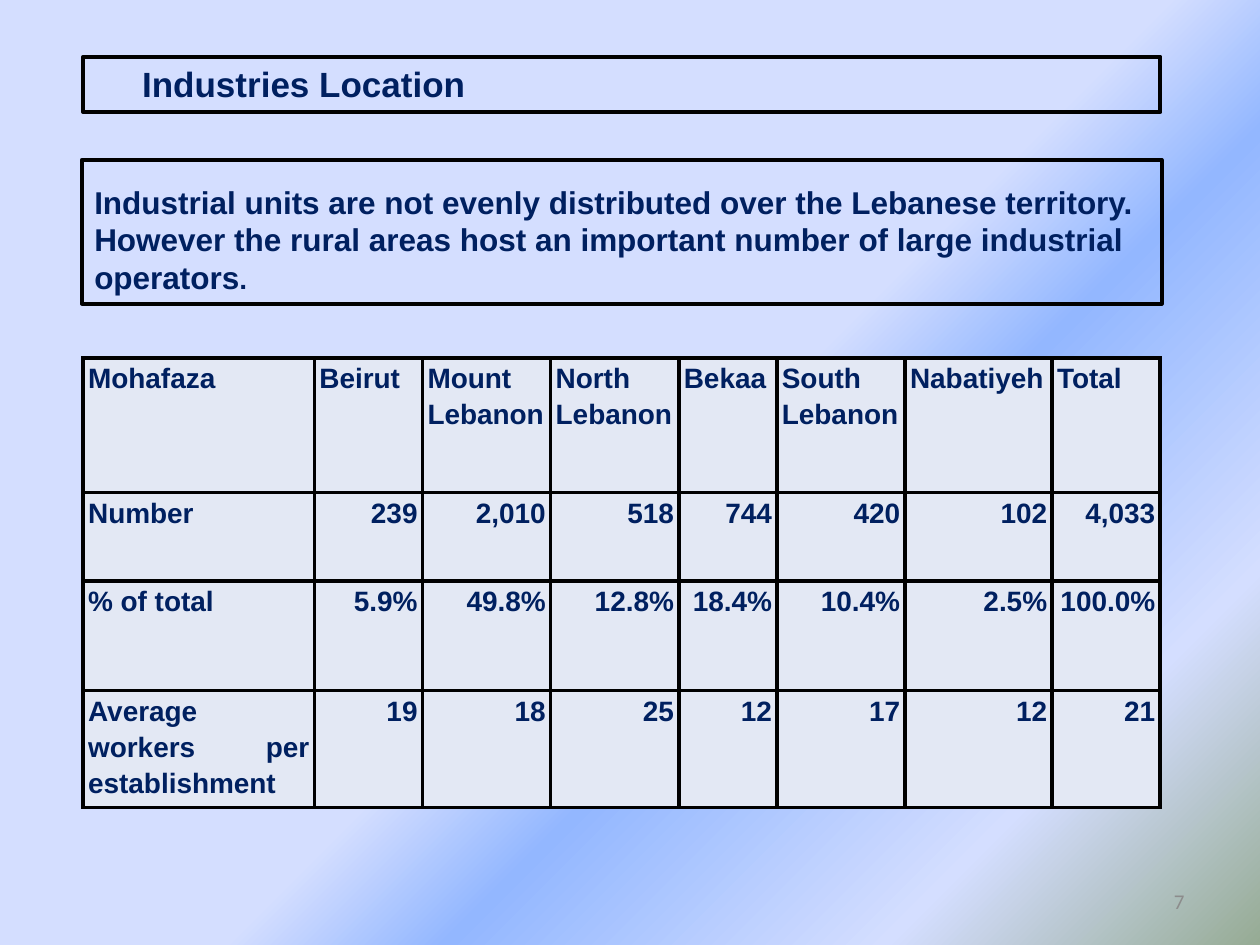
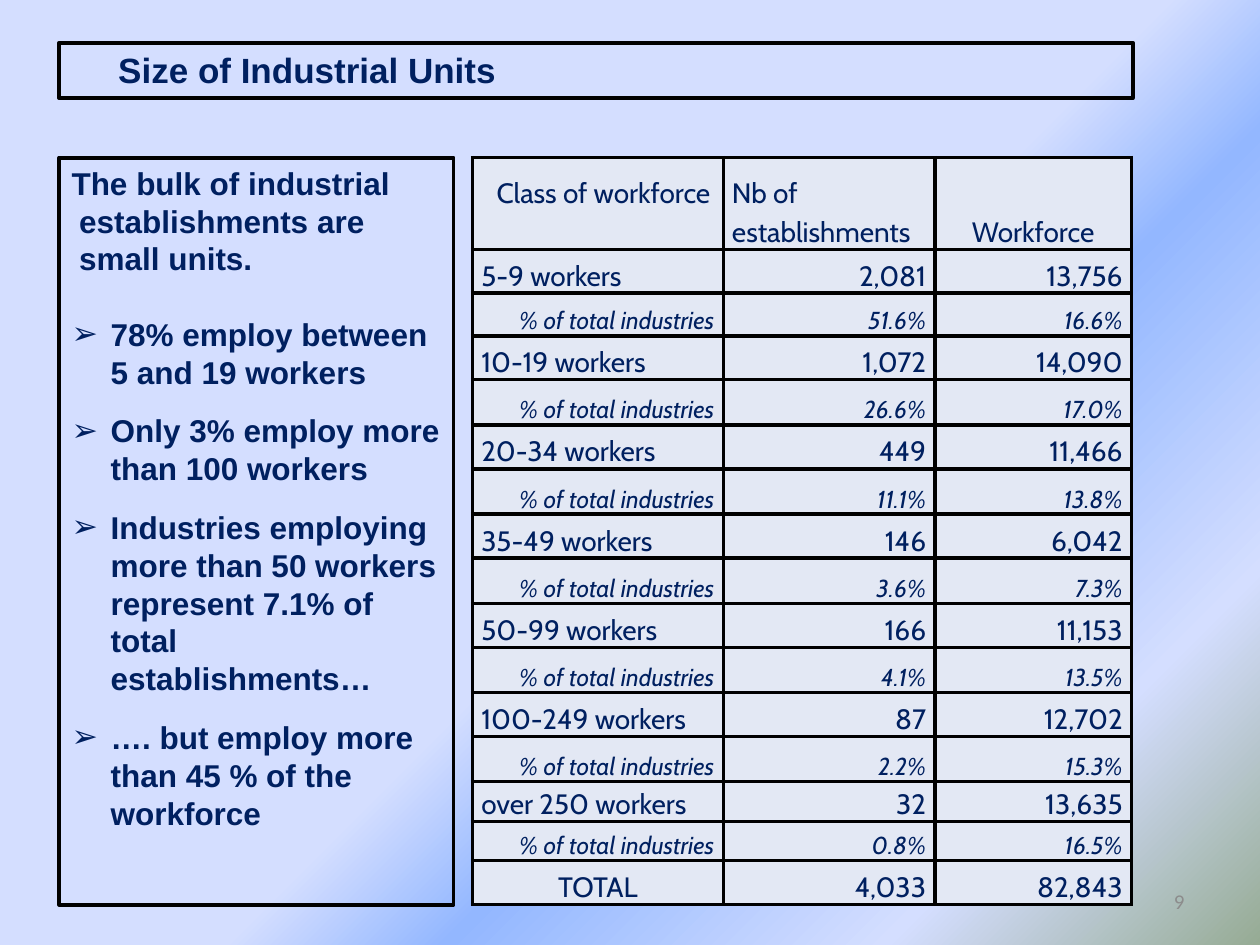
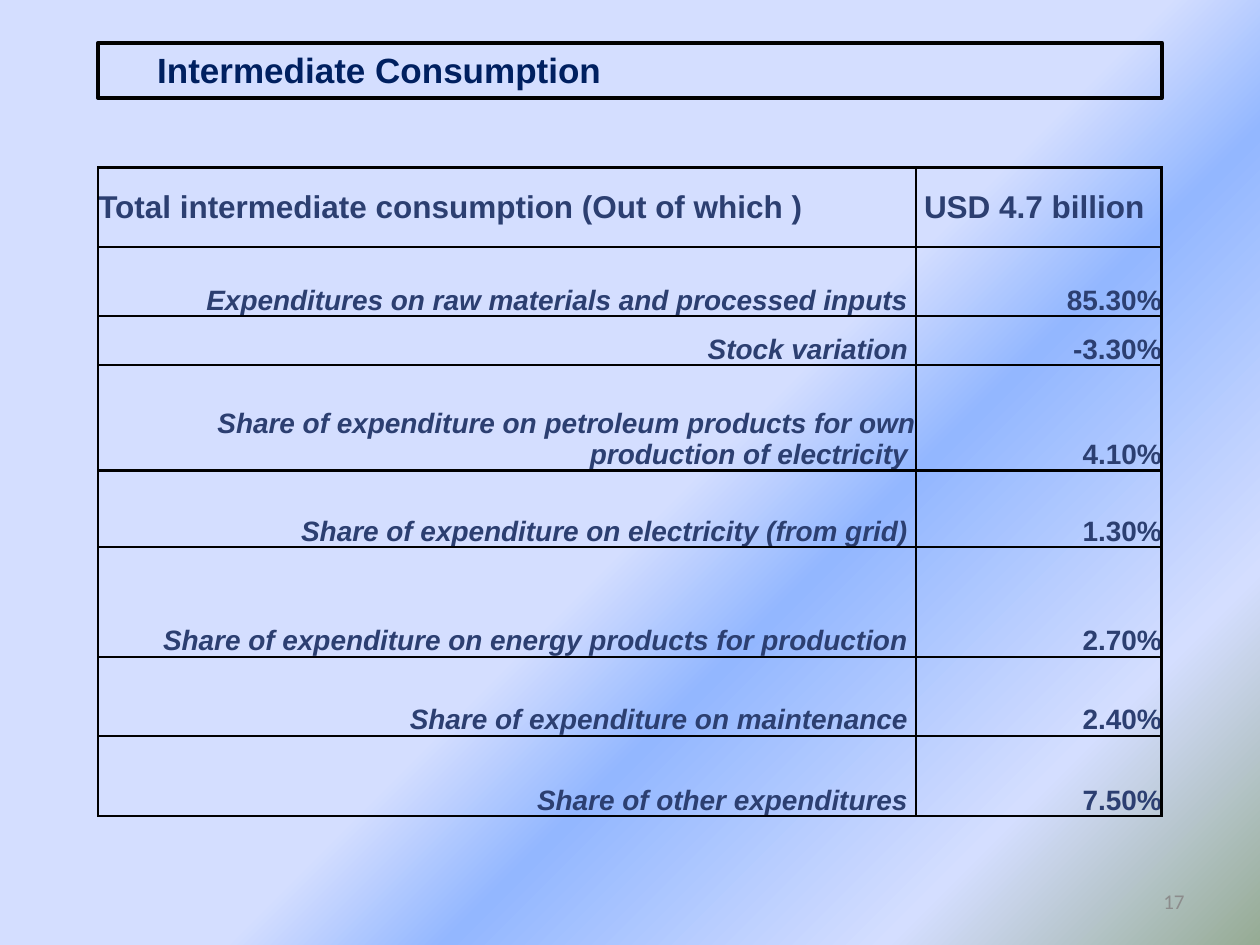
from dataclasses import dataclass, replace

from lxml import etree
from pptx import Presentation
from pptx.dml.color import RGBColor
from pptx.enum.shapes import MSO_SHAPE
from pptx.enum.text import MSO_ANCHOR, PP_ALIGN
from pptx.oxml.ns import qn
from pptx.util import Emu, Inches, Pt

RECTANGLE = MSO_SHAPE.RECTANGLE
TOP, MIDDLE, BOTTOM = MSO_ANCHOR.TOP, MSO_ANCHOR.MIDDLE, MSO_ANCHOR.BOTTOM
LEFT, CENTER, RIGHT, JUSTIFY = PP_ALIGN.LEFT, PP_ALIGN.CENTER, PP_ALIGN.RIGHT, PP_ALIGN.JUSTIFY

PAGE_WIDTH, PAGE_HEIGHT = Inches(10), Inches(7.5)
NAVY, SLATE, BLACK, GREY, CELL_FILL = "002060", "2C3F71", "000000", "8C8C8C", "E3E8F4"
BACKDROP_STOPS = [(53, "D4DEFF"), (63, "93B7FF"), (83, "D4DEFF"), (100, "96AB94")]
TITLE_HEIGHT = 5.87


@dataclass(frozen=True)
class Box:
    """A region in percent of the slide's width and height."""
    left: float
    top: float
    width: float
    height: float

    def lengths(self):
        return (Emu(round(self.left * PAGE_WIDTH / 100)), Emu(round(self.top * PAGE_HEIGHT / 100)),
                Emu(round(self.width * PAGE_WIDTH / 100)), Emu(round(self.height * PAGE_HEIGHT / 100)))


@dataclass(frozen=True)
class Look:
    """How a piece of text is set; margins run left, top, right, bottom in inches."""
    size: float = 18
    font: str = "Arial"
    color: str = NAVY
    bold: bool = True
    italic: bool = False
    align: PP_ALIGN = LEFT
    anchor: MSO_ANCHOR = TOP
    margins: tuple = (0.1, 0.05, 0.1, 0.05)
    spacing: float = 1.0


NUMBER_LOOK = Look(size=12, font="Calibri", color=GREY, bold=False, align=RIGHT, anchor=MIDDLE)


def rgb(value):
    return RGBColor.from_string(value)


# Text

def add_span(para, text, look):
    span = para.add_run()
    span.text = text
    font = span.font
    font.name, font.size, font.bold, font.italic = look.font, Pt(look.size), look.bold, look.italic
    font.color.rgb = rgb(look.color)


def set_para(para, text, look):
    para.alignment = look.align
    para.line_spacing = look.spacing
    add_span(para, text, look)


def set_indent(para, margin, first_line, bullet=None):
    props = para._p.get_or_add_pPr()
    props.set("marL", str(Inches(margin)))
    props.set("indent", str(Inches(first_line)))
    if bullet:
        etree.SubElement(props, qn("a:buFont")).set("typeface", "Arial")
        etree.SubElement(props, qn("a:buChar")).set("char", bullet)


def set_margins(holder, margins):
    holder.margin_left, holder.margin_top, holder.margin_right, holder.margin_bottom = map(Inches, margins)


def prepare_frame(shape, look):
    frame = shape.text_frame
    frame.word_wrap = True
    frame.vertical_anchor = look.anchor
    set_margins(frame, look.margins)
    return frame


# Shared parts of each slide

def paint_backdrop(page):
    page.background.fill.gradient()
    gradient = next(page.element.iter(qn("a:gradFill")))
    stops = gradient.find(qn("a:gsLst"))
    for stop in list(stops):
        stops.remove(stop)
    for position, color in BACKDROP_STOPS:
        stop = etree.SubElement(stops, qn("a:gs"), pos=str(position * 1000))
        etree.SubElement(stop, qn("a:srgbClr"), val=color)
    direction = gradient.find(qn("a:lin"))
    direction.set("ang", str(45 * 60000))
    direction.set("scaled", "0")


def add_frame(page, box, look):
    shape = page.shapes.add_shape(RECTANGLE, *box.lengths())
    shape.shadow.inherit = False
    shape.fill.background()
    shape.line.color.rgb = rgb(BLACK)
    shape.line.width = Pt(2.25)
    return prepare_frame(shape, look)


def add_page(deck, title, number, left, top, width):
    page = deck.slides.add_slide(deck.slide_layouts[6])
    paint_backdrop(page)
    # Title band
    look = Look(size=20)
    para = add_frame(page, Box(left, top, width, TITLE_HEIGHT), look).paragraphs[0]
    set_para(para, title, look)
    set_indent(para, 0.76, -0.39)
    # Page number
    holder = page.shapes.add_textbox(*Box(71.7, 92.67, 23.3, 5.33).lengths())
    set_para(prepare_frame(holder, NUMBER_LOOK).paragraphs[0], str(number), NUMBER_LOOK)
    return page


# Tables

def set_borders(cell, width):
    props = cell._tc.get_or_add_tcPr()
    for index, side in enumerate(("a:lnL", "a:lnR", "a:lnT", "a:lnB")):
        line = etree.Element(qn(side), w=str(Pt(width)))
        fill = etree.SubElement(line, qn("a:solidFill"))
        etree.SubElement(fill, qn("a:srgbClr"), val=BLACK)
        props.insert(index, line)


def share_out(tracks, name, weights, total):
    for track, weight in zip(tracks, weights):
        setattr(track, name, Emu(round(total * weight / sum(weights))))


def add_grid(page, box, columns, heights, rows, look_at, border, fill=None):
    """Draw rows of text; look_at(row, column) gives the look of each cell."""
    left, top, width, height = box.lengths()
    table = page.shapes.add_table(len(rows), len(columns), left, top, width, height).table
    table.first_row = table.horz_banding = False
    share_out(table.columns, "width", columns, width)
    share_out(table.rows, "height", heights, height)
    for row, texts in enumerate(rows):
        for column, text in enumerate(texts):
            cell, look = table.cell(row, column), look_at(row, column)
            set_margins(cell, look.margins)
            cell.vertical_anchor = look.anchor
            set_para(cell.text_frame.paragraphs[0], text, look)
            if fill:
                cell.fill.solid()
                cell.fill.fore_color.rgb = rgb(fill)
            else:
                cell.fill.background()
            set_borders(cell, border)


# Slide: location

def build_location(deck):
    page = add_page(deck, "Industries Location", 7, 6.6, 6, 85.5)
    # Statement
    look = Look(margins=(0.1, 0.18, 0.1, 0.05))
    para = add_frame(page, Box(6.5, 16.93, 85.7, 15.2), look).paragraphs[0]
    set_para(para, "Industrial units are not evenly distributed over the Lebanese territory. However the "
                   "rural areas host an important number of large industrial operators", look)
    add_span(para, ".", replace(look, font="Cabin"))
    # Figures by district
    rows = [
        ["Mohafaza", "Beirut", "Mount Lebanon", "North Lebanon", "Bekaa", "South Lebanon", "Nabatiyeh", "Total"],
        ["Number", "239", "2,010", "518", "744", "420", "102", "4,033"],
        ["% of total", "5.9%", "49.8%", "12.8%", "18.4%", "10.4%", "2.5%", "100.0%"],
        ["Average workers per establishment", "19", "18", "25", "12", "17", "12", "21"],
    ]
    label = Look(size=16, align=JUSTIFY, margins=(0.04, 0.01, 0.04, 0), spacing=1.15)
    figure = replace(label, align=RIGHT)
    add_grid(page, Box(6.6, 37.87, 85.5, 47.6), [1.84, 0.86, 1.02, 1.02, 0.78, 1.02, 1.17, 0.86],
             [1.07, 0.7, 0.87, 0.93], rows,
             lambda row, column: figure if row and column else label, 2.25, CELL_FILL)


# Slide: size of units

def add_findings(page, box):
    look = Look()
    frame = add_frame(page, box, look)
    lead = frame.paragraphs[0]
    set_para(lead, "The bulk of industrial establishments are small units.", look)
    set_indent(lead, 0.06, -0.06)
    lead.space_after = Pt(21.5)
    for finding in ("78% employ between 5 and 19 workers",
                    "Only 3% employ more than 100 workers",
                    "Industries employing more than 50 workers represent 7.1% of total establishments…",
                    "…. but employ more than 45 % of the workforce"):
        para = frame.add_paragraph()
        set_para(para, finding, look)
        para.space_after = Pt(12)
        set_indent(para, 0.31, -0.31, "➢")


def add_size_table(page, box):
    classes = [
        ("5-9 workers", "2,081", "13,756", "51.6%", "16.6%"),
        ("10-19 workers", "1,072", "14,090", "26.6%", "17.0%"),
        ("20-34 workers", "449", "11,466", "11.1%", "13.8%"),
        ("35-49 workers", "146", "6,042", "3.6%", "7.3%"),
        ("50-99 workers", "166", "11,153", "4.1%", "13.5%"),
        ("100-249 workers", "87", "12,702", "2.2%", "15.3%"),
        ("over 250 workers", "32", "13,635", "0.8%", "16.5%"),
    ]
    rows = [("Class of workforce", "Nb of establishments", "Workforce")]
    for name, units, workers, unit_share, worker_share in classes:
        rows += [(name, units, workers), ("% of total industries", unit_share, worker_share)]
    rows.append(("TOTAL", "4,033", "82,843"))
    last = len(rows) - 1

    label = Look(size=16, font="Cabin", bold=False, anchor=BOTTOM, margins=(0.07, 0, 0.07, 0), spacing=1.15)
    centered, figure = replace(label, align=CENTER), replace(label, align=RIGHT)
    share = replace(figure, size=14, italic=True)
    raised = replace(centered, margins=(0.16, 0, 0.07, 0.31))

    def look_at(row, column):
        if row == 0:
            return (raised, label, centered)[column]
        if row < last and row % 2 == 0:
            return share
        if column:
            return figure
        return centered if row == last else label

    heights = [0.73, 0.35, 0.34] + [0.35, 0.36] * 5 + [0.32, 0.31, 0.35]
    add_grid(page, box, [1.99, 1.68, 1.56], heights, rows, look_at, 2.25, CELL_FILL)


def build_sizes(deck):
    page = add_page(deck, "Size of Industrial Units", 9, 4.7, 4.53, 85.2)
    add_findings(page, Box(4.7, 16.67, 31.3, 79.07))
    add_size_table(page, Box(37.5, 16.67, 52.3, 79.07))


# Slide: intermediate consumption

def build_consumption(deck):
    page = add_page(deck, "Intermediate Consumption", 17, 7.8, 4.53, 84.4)
    rows = [
        ("Total intermediate consumption (Out of which )", "USD 4.7 billion "),
        ("Expenditures on raw materials and processed inputs ", "85.30%"),
        ("Stock variation ", "-3.30%"),
        ("Share of expenditure on petroleum products for own production of electricity ", "4.10%"),
        ("Share of expenditure on electricity (from grid) ", "1.30%"),
        ("Share of expenditure on energy products for production ", "2.70%"),
        ("Share of expenditure on maintenance ", "2.40%"),
        ("Share of other expenditures ", "7.50%"),
    ]
    heading = Look(color=SLATE, anchor=MIDDLE, margins=(0, 0, 0, 0))
    figure = replace(heading, size=16, align=RIGHT, anchor=BOTTOM)
    looks = {(True, 0): heading, (True, 1): replace(heading, align=CENTER),
             (False, 0): replace(figure, italic=True), (False, 1): figure}
    add_grid(page, Box(7.8, 17.73, 84.4, 68.67), [6.48, 1.95],
             [0.63, 0.55, 0.39, 0.84, 0.61, 0.87, 0.63, 0.64], rows,
             lambda row, column: looks[row == 0, column], 1.5)


def main():
    deck = Presentation()
    deck.slide_width, deck.slide_height = PAGE_WIDTH, PAGE_HEIGHT
    for build in (build_location, build_sizes, build_consumption):
        build(deck)
    deck.save("out.pptx")


if __name__ == "__main__":
    main()
